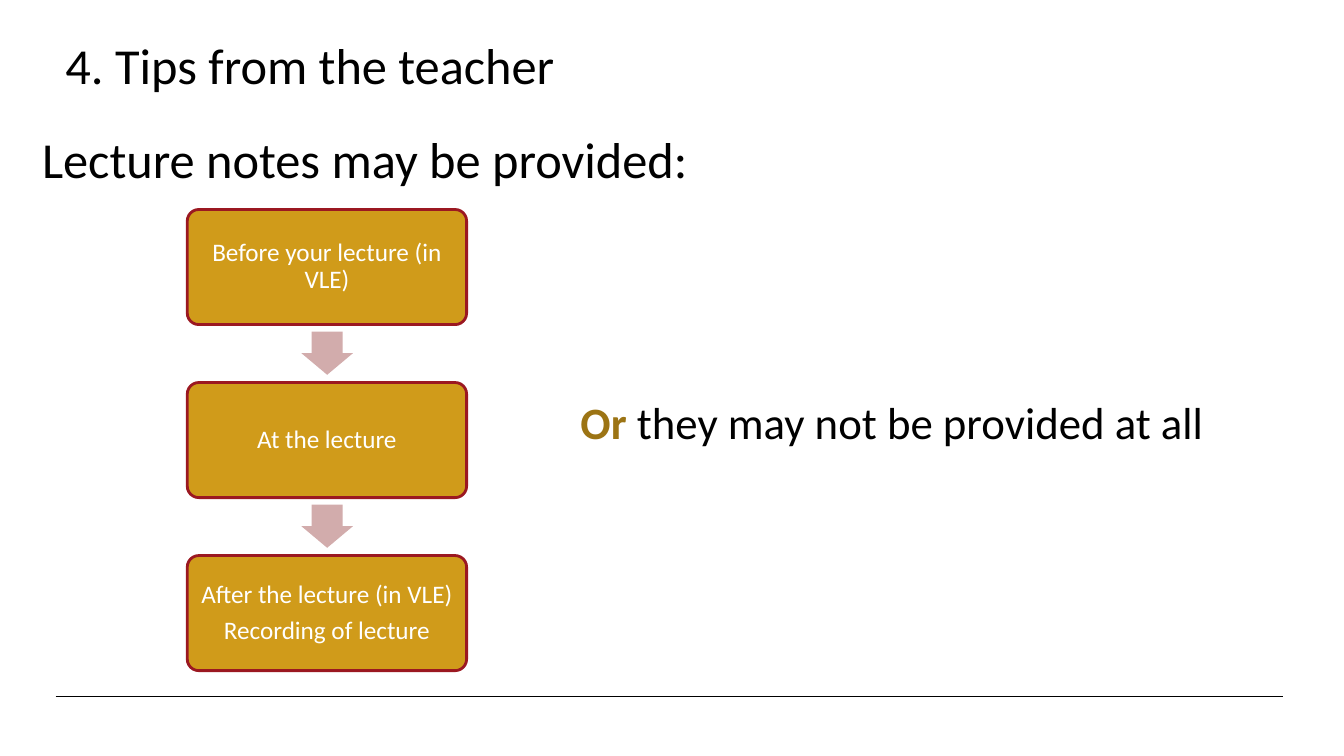
from lxml.etree import SubElement
from pptx import Presentation
from pptx.dml.color import RGBColor
from pptx.enum.shapes import MSO_CONNECTOR, MSO_SHAPE
from pptx.enum.text import MSO_ANCHOR, PP_ALIGN
from pptx.oxml.ns import qn
from pptx.util import Cm, Pt

STEPS = [
    ["Before your lecture (in VLE)"],
    ["At the lecture"],
    ["After the lecture (in VLE)", "Recording of lecture"],
]
STEP_TOP = 5.28
STEP_PITCH = 4.36
ARROW_OFFSET = 2.97


def paint(target, color):
    target.solid()
    target.fore_color.rgb = RGBColor.from_string(color)


def add_text(para, text, size=18, color="000000", bold=False):
    span = para.add_run()
    span.text = text
    span.font.name = "Calibri"
    span.font.size = Pt(size)
    span.font.bold = bold
    paint(span.font.fill, color)


def add_box(page, left, top, width, height, anchor=MSO_ANCHOR.MIDDLE):
    box = page.shapes.add_textbox(Cm(left), Cm(top), Cm(width), Cm(height))
    box.text_frame.word_wrap = True
    box.text_frame.vertical_anchor = anchor
    return box.text_frame.paragraphs[0]


def add_rule(page, left, right, top):
    rule = page.shapes.add_connector(
        MSO_CONNECTOR.STRAIGHT, Cm(left), Cm(top), Cm(right), Cm(top))
    paint(rule.line.fill, "000000")
    rule.line.width = Pt(0.75)
    SubElement(rule.element.spPr, qn("a:effectLst"))


def add_step(page, top, lines):
    step = page.shapes.add_shape(
        MSO_SHAPE.ROUNDED_RECTANGLE, Cm(4.72), Cm(top), Cm(7.04), Cm(2.9))
    step.adjustments[0] = 0.1
    step.shadow.inherit = False
    paint(step.fill, "D09B1A")
    paint(step.line.fill, "9B1821")
    step.line.width = Pt(2)
    frame = step.text_frame
    frame.word_wrap = True
    frame.vertical_anchor = MSO_ANCHOR.MIDDLE
    frame.margin_left = frame.margin_right = Cm(0.18)
    frame.margin_top = frame.margin_bottom = Cm(0.18)
    for index, line in enumerate(lines):
        para = frame.add_paragraph() if index else frame.paragraphs[0]
        para.alignment = PP_ALIGN.CENTER
        para.line_spacing = 0.9
        para.space_after = Pt(6.3)
        add_text(para, line, color="FFFFFF")


def add_arrow(page, top):
    arrow = page.shapes.add_shape(
        MSO_SHAPE.RIGHT_ARROW, Cm(7.7), Cm(top), Cm(1.09), Cm(1.3))
    arrow.rotation = 90
    arrow.adjustments[0] = 0.6
    arrow.adjustments[1] = 0.5
    arrow.shadow.inherit = False
    paint(arrow.fill, "D2ACAC")
    arrow.line.fill.background()


def main():
    deck = Presentation()
    deck.slide_width = Cm(33.87)
    deck.slide_height = Cm(19.05)
    page = deck.slides.add_slide(deck.slide_layouts[6])

    add_rule(page, 1.4, 32.33, 17.55)
    for index, lines in enumerate(STEPS):
        top = STEP_TOP + index * STEP_PITCH
        add_step(page, top, lines)
        if index < len(STEPS) - 1:
            add_arrow(page, top + ARROW_OFFSET)

    subtitle = add_box(page, 0.81, 3.1, 23.8, 1.8)
    add_text(subtitle, "Lecture notes may be provided:", size=36)

    remark = add_box(page, 14.38, 9.83, 19.25, 1.6, anchor=MSO_ANCHOR.TOP)
    add_text(remark, "Or", size=32, color="9C7414", bold=True)
    add_text(remark, " they may not be provided at all", size=32)

    title = add_box(page, 1.4, 0.71, 23.7, 1.8)
    add_text(title, "4. Tips from the teacher", size=36)

    deck.save("out.pptx")


if __name__ == "__main__":
    main()
